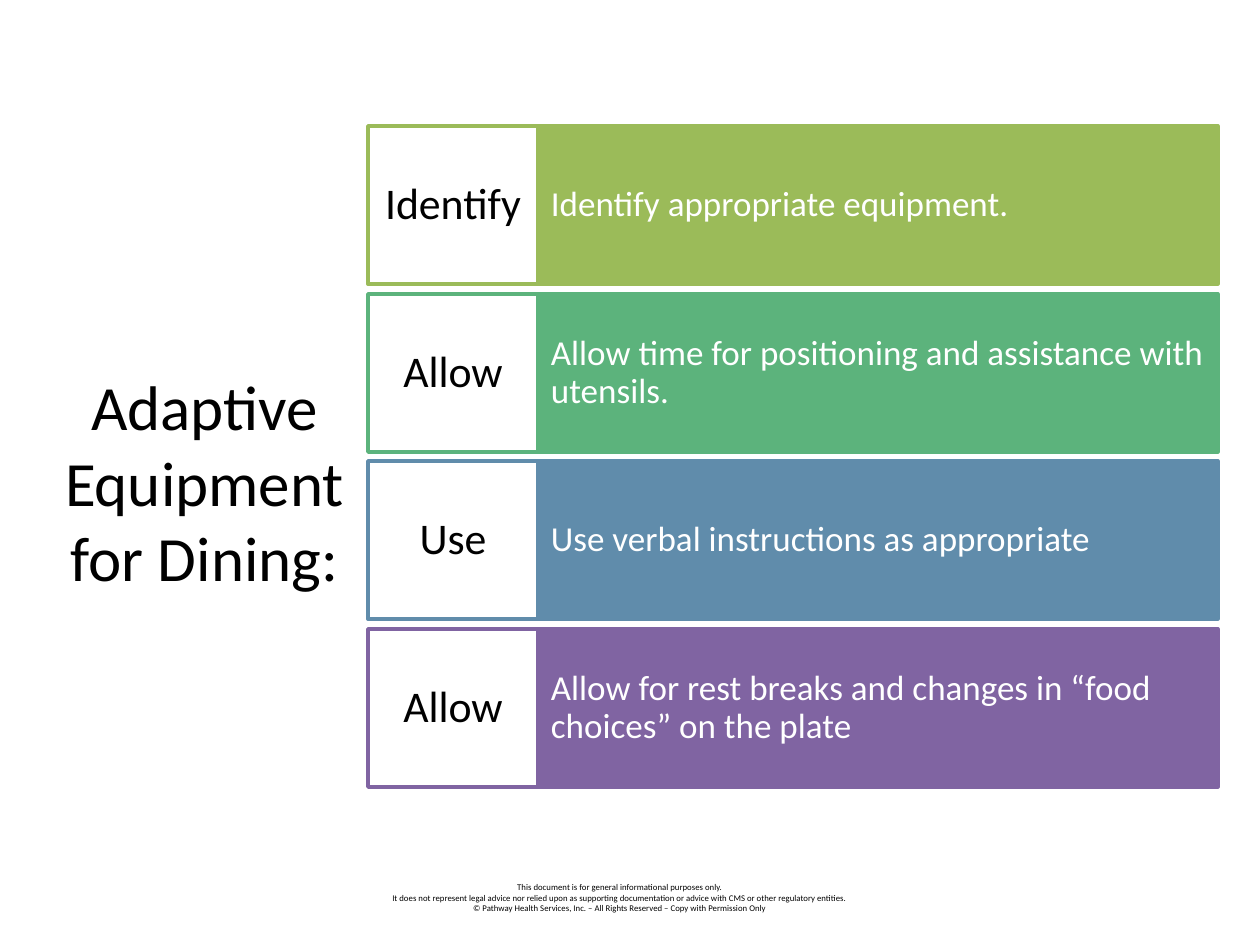
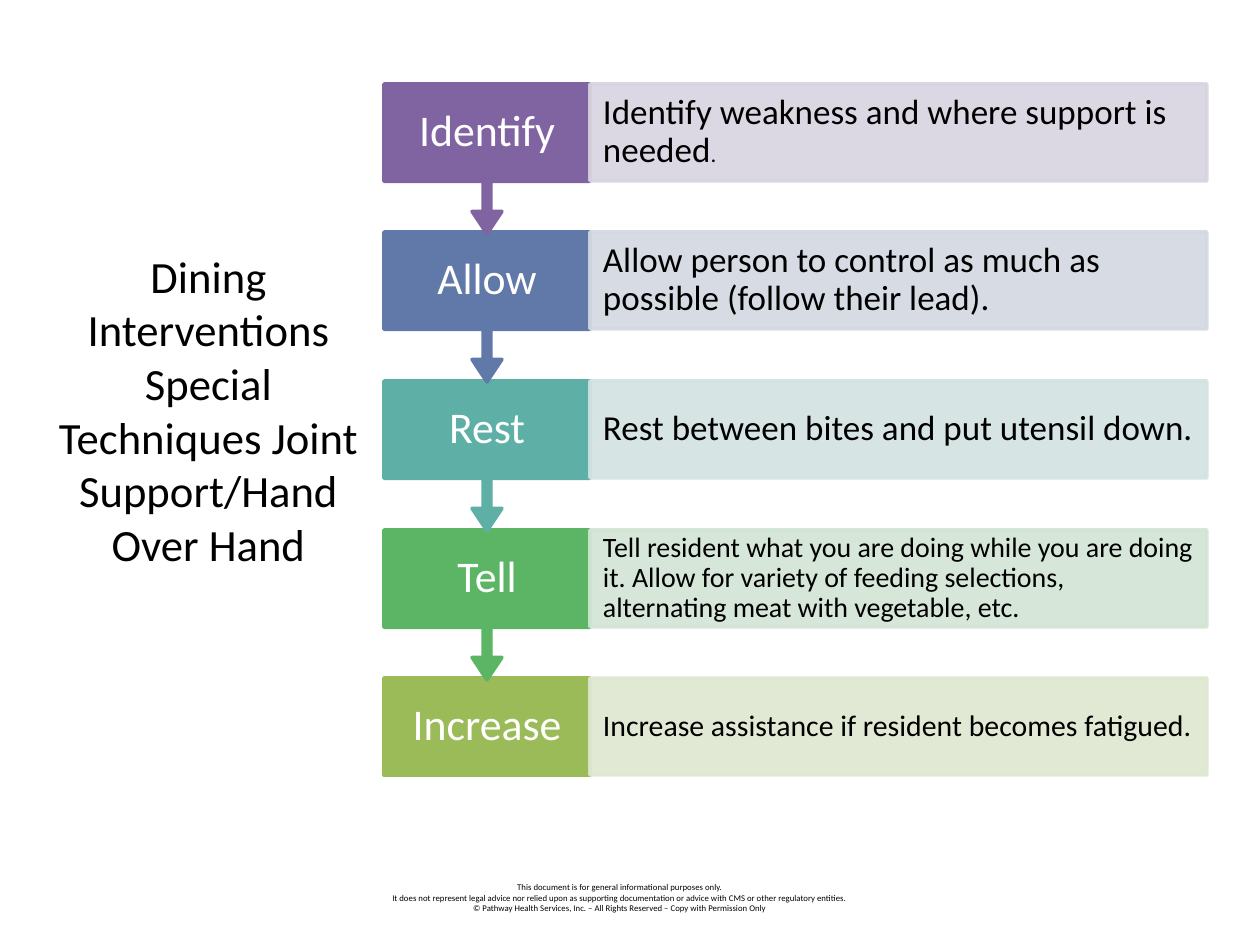
from lxml import etree
from pptx import Presentation
from pptx.dml.color import RGBColor
from pptx.enum.shapes import MSO_SHAPE
from pptx.enum.text import MSO_ANCHOR, PP_ALIGN
from pptx.oxml.ns import qn
from pptx.util import Pt

PX = 7257.14  # EMU in one px, 126 px to the inch
FONT = "Calibri"

BLACK = RGBColor(0, 0, 0)
WHITE = RGBColor(255, 255, 255)
OLIVE = RGBColor(0x9B, 0xBB, 0x59)
JADE = RGBColor(0x5C, 0xB3, 0x7C)
STEEL = RGBColor(0x60, 0x8C, 0xAB)
PLUM = RGBColor(0x80, 0x64, 0xA2)
BLUE = RGBColor(0x61, 0x79, 0xA8)
TEAL = RGBColor(0x5E, 0xAF, 0xA6)
GREEN = RGBColor(0x5C, 0xB5, 0x65)
PALE_PLUM = RGBColor(0xD8, 0xD3, 0xE0)
PALE_BLUE = RGBColor(0xD3, 0xD8, 0xE2)
PALE_TEAL = RGBColor(0xD2, 0xE3, 0xE2)
PALE_GREEN = RGBColor(0xD2, 0xE5, 0xD5)
PALE_OLIVE = RGBColor(0xDE, 0xE7, 0xD1)

FOOTER = [
    "This document is for general informational purposes only.",
    "It does not represent legal advice nor relied upon as supporting "
    "documentation or advice with CMS or other regulatory entities.",
    "© Pathway Health Services, Inc. – All Rights Reserved – Copy with Permission Only",
]

GEAR_TITLE = "Adaptive Equipment for Dining:"
GEAR = [  # label, text, colour
    ("Identify", "Identify appropriate equipment.", OLIVE),
    ("Allow", "Allow time for positioning and assistance with utensils.", JADE),
    ("Use", "Use verbal instructions as appropriate", STEEL),
    ("Allow", "Allow for rest breaks and changes in “food choices” on the plate", PLUM),
]

STEP_TITLE = "Dining Interventions Special Techniques Joint Support/Hand Over Hand"
STEPS = [  # label, text, text size, colour, pale colour
    ("Identify", "Identify weakness and where support is needed", 20, PLUM, PALE_PLUM),
    ("Allow", "Allow person to control as much as possible (follow their lead).",
     20, BLUE, PALE_BLUE),
    ("Rest", "Rest between bites and put utensil down.", 20, TEAL, PALE_TEAL),
    ("Tell", "Tell resident what you are doing while you are doing it. Allow for "
     "variety of feeding selections, alternating meat with vegetable, etc.",
     16, GREEN, PALE_GREEN),
    ("Increase", "Increase assistance if resident becomes fatigued.",
     17, OLIVE, PALE_OLIVE),
]


def scale(*lengths):
    return [round(n * PX) for n in lengths]


def write(shape, lines, size, color, align=PP_ALIGN.CENTER, pad=(13, 6, 13, 6),
          anchor=MSO_ANCHOR.MIDDLE, space=None):
    """Fill a shape with text; pad is left, top, right, bottom in px."""
    frame = shape.text_frame
    frame.word_wrap = True
    frame.vertical_anchor = anchor
    (frame.margin_left, frame.margin_top,
     frame.margin_right, frame.margin_bottom) = scale(*pad)
    frame.text = "\n".join(lines)
    for para in frame.paragraphs:
        para.alignment = align
        para.line_spacing = space
        para.font.name = FONT
        para.font.size = Pt(size)
        para.font.color.rgb = color


def text(slide, box, lines, size, **more):
    shape = slide.shapes.add_textbox(*scale(*box))
    write(shape, lines, size, BLACK, **more)


def block(slide, kind, box, fill, line):
    shape = slide.shapes.add_shape(kind, *scale(*box))
    shape.shadow.inherit = False
    shape.fill.solid()
    shape.fill.fore_color.rgb = fill
    shape.line.color.rgb = line
    shape.line.width = Pt(2)
    return shape


def fade(shape, percent):
    """Set the opacity of fill and line."""
    for color in shape._element.spPr.iter(qn("a:srgbClr")):
        etree.SubElement(color, qn("a:alpha"), val=str(percent * 1000))


def label(shape, word, color, side):
    write(shape, [word], 25, color, pad=(side, 0, side, 0), space=0.9)


def body(shape, words, size, color):
    write(shape, [words], size, color, PP_ALIGN.LEFT, (13, 0, 13, 0), space=0.9)


def start(deck):
    slide = deck.slides.add_slide(deck.slide_layouts[6])
    text(slide, (347, 876, 546, 44), FOOTER, 5, anchor=MSO_ANCHOR.TOP)
    return slide


def gear(deck):
    slide = start(deck)
    text(slide, (42, 202, 325, 558), [GEAR_TITLE], 36)
    left, mid, right = 368, 538, 1218
    top, last, high = 126, 629, 158
    pitch = (last - top) / (len(GEAR) - 1)
    for i, (word, words, color) in enumerate(GEAR):
        y = round(top + i * pitch)
        bar = block(slide, MSO_SHAPE.RECTANGLE, (mid, y, right - mid, high), color, color)
        body(bar, words, 20, WHITE)
        tag = block(slide, MSO_SHAPE.RECTANGLE, (left, y, mid - left, high), WHITE, color)
        label(tag, word, BLACK, 9)


def steps(deck):
    slide = start(deck)
    # The deep bottom margin lifts the title by half a line
    text(slide, (32, 189, 353, 495), [STEP_TITLE], 25.5, pad=(13, 6, 13, 60))
    left, mid, right = 384, 590, 1207
    top, last, high, drop = 84, 678, 97, 150
    end = len(STEPS) - 1
    pitch = (last - top) / end
    # Bottom row first, so that each arrow lies over the row below it
    for i in range(end, -1, -1):
        word, words, size, color, pale = STEPS[i]
        y = round(top + i * pitch)
        if i == end:
            tag = block(slide, MSO_SHAPE.RECTANGLE, (left, y, mid - left, high), color, color)
        else:
            tag = block(slide, MSO_SHAPE.DOWN_ARROW_CALLOUT,
                        (left, y, mid - left, drop), color, color)
            for k, value in enumerate((0.05, 0.1, 0.15, 0.65)):
                tag.adjustments[k] = value
        label(tag, word, WHITE, 15)
        bar = block(slide, MSO_SHAPE.RECTANGLE, (mid, y, right - mid, high), pale, pale)
        fade(bar, 90)
        body(bar, words, size, BLACK)
        if i == 0:
            dot = bar.text_frame.paragraphs[0].add_run()
            dot.text = "."
            dot.font.size = Pt(13)


def main():
    deck = Presentation()
    deck.slide_width, deck.slide_height = scale(1260, 945)
    gear(deck)
    steps(deck)
    deck.save("out.pptx")


if __name__ == "__main__":
    main()
